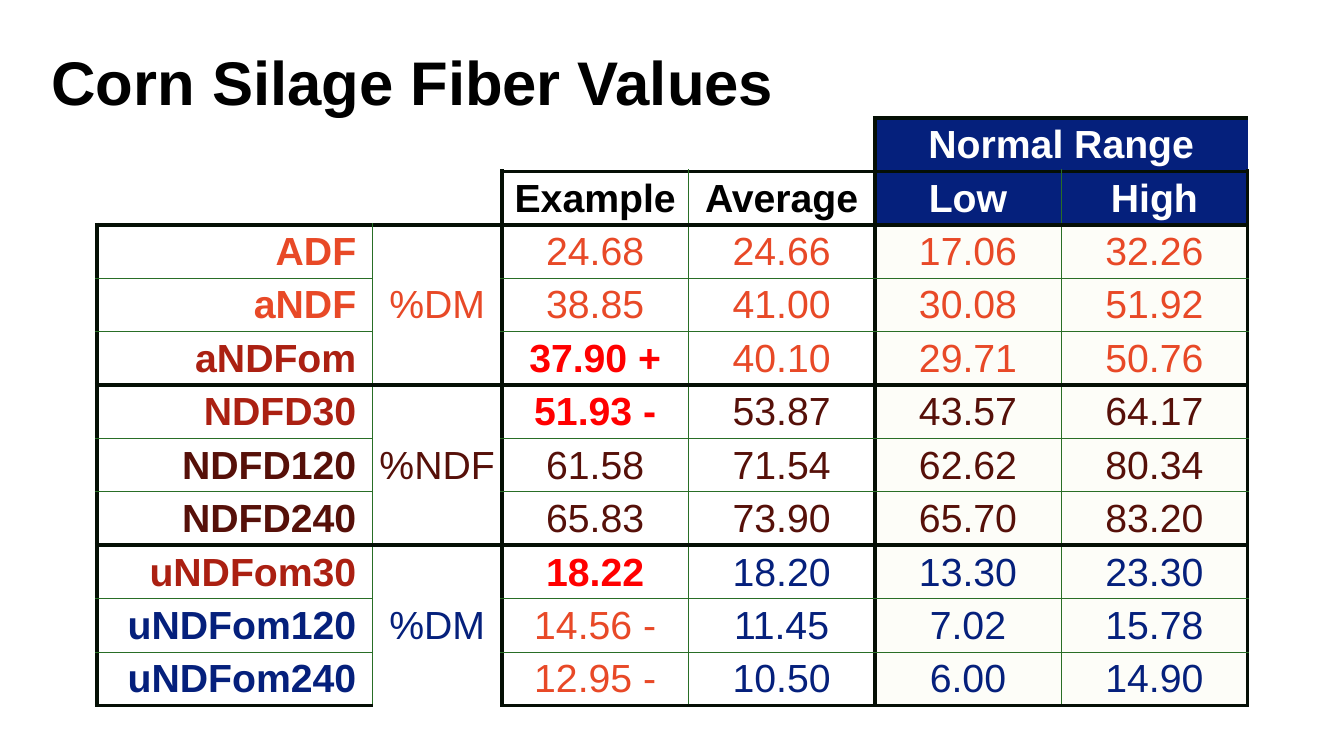
from dataclasses import dataclass
from typing import Optional

from lxml.etree import SubElement
from pptx import Presentation
from pptx.dml.color import RGBColor
from pptx.enum.text import MSO_ANCHOR, PP_ALIGN
from pptx.oxml import parse_xml
from pptx.oxml.ns import nsdecls, qn
from pptx.util import Inches, Pt

BLACK = RGBColor(0x00, 0x00, 0x00)
WHITE = RGBColor(0xFF, 0xFF, 0xFF)
NAVY = RGBColor(0x05, 0x20, 0x7C)
CREAM = RGBColor(0xFD, 0xFD, 0xF8)
ORANGE = RGBColor(0xE8, 0x49, 0x27)
BRICK = RGBColor(0xAB, 0x20, 0x12)
BROWN = RGBColor(0x56, 0x10, 0x09)
RED = RGBColor(0xFF, 0x00, 0x00)
INK = RGBColor(0x05, 0x0F, 0x05)
GREEN = RGBColor(0x29, 0x6E, 0x26)

# Lengths are percent of the slide's width or height
WIDE, HIGH = Inches(13.33), Inches(7.5)
COLS = [20.5, 9.65] + [13.87] * 4
ROW = 7.07
HEAD, GROUP = 2, 3
HEAVY_ROWS, HEAVY_COLS = {0, 1, 2, 5, 8, 11}, {0, 2, 4, 6}


@dataclass
class Fiber:
    name: str
    tint: RGBColor
    example: str
    mark: RGBColor
    rest: list[str]


@dataclass
class Group:
    unit: str
    tint: RGBColor
    fibers: list[Fiber]


GROUPS = [
    Group("%DM", ORANGE, [
        Fiber("ADF", ORANGE, "24.68", ORANGE, ["24.66", "17.06", "32.26"]),
        Fiber("aNDF", ORANGE, "38.85", ORANGE, ["41.00", "30.08", "51.92"]),
        Fiber("aNDFom", BRICK, "37.90 +", RED, ["40.10", "29.71", "50.76"]),
    ]),
    Group("%NDF", BROWN, [
        Fiber("NDFD30", BRICK, "51.93 -", RED, ["53.87", "43.57", "64.17"]),
        Fiber("NDFD120", BROWN, "61.58", BROWN, ["71.54", "62.62", "80.34"]),
        Fiber("NDFD240", BROWN, "65.83", BROWN, ["73.90", "65.70", "83.20"]),
    ]),
    Group("%DM", NAVY, [
        Fiber("uNDFom30", BRICK, "18.22", RED, ["18.20", "13.30", "23.30"]),
        Fiber("uNDFom120", NAVY, "14.56 -", ORANGE, ["11.45", "7.02", "15.78"]),
        Fiber("uNDFom240", NAVY, "12.95 -", ORANGE, ["10.50", "6.00", "14.90"]),
    ]),
]
ROWS = HEAD + GROUP * len(GROUPS)


def across(share: float) -> int:
    return round(WIDE * share / 100)


def down(share: float) -> int:
    return round(HIGH * share / 100)


def write(frame, text: str, *, tint: RGBColor, size: float = 28,
          bold: bool = False, align=PP_ALIGN.CENTER) -> None:
    para = frame.paragraphs[0]
    para.alignment = align
    run = para.add_run()
    run.text = text
    font = run.font
    font.name, font.size, font.bold = "Arial", Pt(size), bold
    font.color.rgb = tint


def fill(grid, row: int, col: int, text: str, **style) -> None:
    cell = grid.cell(row, col)
    cell.vertical_anchor = MSO_ANCHOR.MIDDLE
    cell.margin_left = cell.margin_top = Inches(0.01)
    cell.margin_right = Inches(0.01 if col else 0.16)
    cell.margin_bottom = 0
    write(cell.text_frame, text, **style)


def owner(row: int, col: int) -> Optional[tuple[int, int]]:
    """First cell of the block that covers a place; None where blank."""
    if not (0 <= row < ROWS and 0 <= col < len(COLS)):
        return None
    if row == 0:
        return (0, 4) if col >= 4 else None
    if row == 1:
        return (1, col) if col >= 2 else None
    if col == 1:
        return (row - (row - HEAD) % GROUP, 1)
    return (row, col)


def rule(cell, row: int, col: int) -> None:
    """Draw a line wherever two different blocks meet."""
    sides = [
        ("L", row, col - 1, col in HEAVY_COLS),
        ("R", row, col + 1, col + 1 in HEAVY_COLS),
        ("T", row - 1, col, row in HEAVY_ROWS),
        ("B", row + 1, col, row + 1 in HEAVY_ROWS),
    ]
    props = cell._tc.get_or_add_tcPr()
    for spot, (side, near, by, heavy) in enumerate(sides):
        line = parse_xml(f"<a:ln{side} {nsdecls('a')}/>")
        if owner(row, col) == owner(near, by):
            SubElement(line, qn("a:noFill"))
        else:
            line.set("w", str(Pt(3 if heavy else 1)))
            paint = SubElement(line, qn("a:solidFill"))
            SubElement(paint, qn("a:srgbClr"), val=str(INK if heavy else GREEN))
        props.insert(spot, line)


def shade(row: int, col: int) -> RGBColor:
    if col < 4:
        return WHITE
    return NAVY if row < HEAD else CREAM


def main() -> None:
    deck = Presentation()
    deck.slide_width, deck.slide_height = WIDE, HIGH
    slide = deck.slides.add_slide(deck.slide_layouts[6])

    # Title
    box = slide.shapes.add_textbox(across(2.85), down(3.33), across(96.6), down(16.67))
    frame = box.text_frame
    frame.word_wrap = True
    frame.margin_left = frame.margin_right = Inches(0.13)
    frame.margin_top, frame.margin_bottom = Inches(0.19), Inches(0.07)
    write(frame, "Corn Silage Fiber Values", tint=BLACK, size=44, bold=True,
          align=PP_ALIGN.LEFT)

    # Table grid
    grid = slide.shapes.add_table(ROWS, len(COLS), across(7.2), down(15.6),
                                  across(sum(COLS)), down(ROW * ROWS)).table
    grid.first_row = grid.horz_banding = False
    for col, share in zip(grid.columns, COLS):
        col.width = across(share)
    for line in grid.rows:
        line.height = down(ROW)
    for row in range(ROWS):
        for col in range(len(COLS)):
            cell = grid.cell(row, col)
            cell.fill.solid()
            cell.fill.fore_color.rgb = shade(row, col)
            rule(cell, row, col)

    # Headings
    grid.cell(0, 0).merge(grid.cell(0, 3))
    grid.cell(0, 4).merge(grid.cell(0, 5))
    grid.cell(1, 0).merge(grid.cell(1, 1))
    fill(grid, 0, 4, "Normal Range", tint=WHITE, bold=True)
    for col, text in enumerate(["Example", "Average", "Low", "High"], 2):
        fill(grid, 1, col, text, tint=BLACK if col < 4 else WHITE, bold=True)

    # Fiber values
    for part, group in enumerate(GROUPS):
        top = HEAD + part * GROUP
        grid.cell(top, 1).merge(grid.cell(top + GROUP - 1, 1))
        fill(grid, top, 1, group.unit, tint=group.tint)
        for row, item in enumerate(group.fibers, top):
            fill(grid, row, 0, item.name, tint=item.tint, bold=True,
                 align=PP_ALIGN.RIGHT)
            fill(grid, row, 2, item.example, tint=item.mark, bold=item.mark == RED)
            for col, text in enumerate(item.rest, 3):
                fill(grid, row, col, text, tint=group.tint)

    deck.save("out.pptx")


if __name__ == "__main__":
    main()
